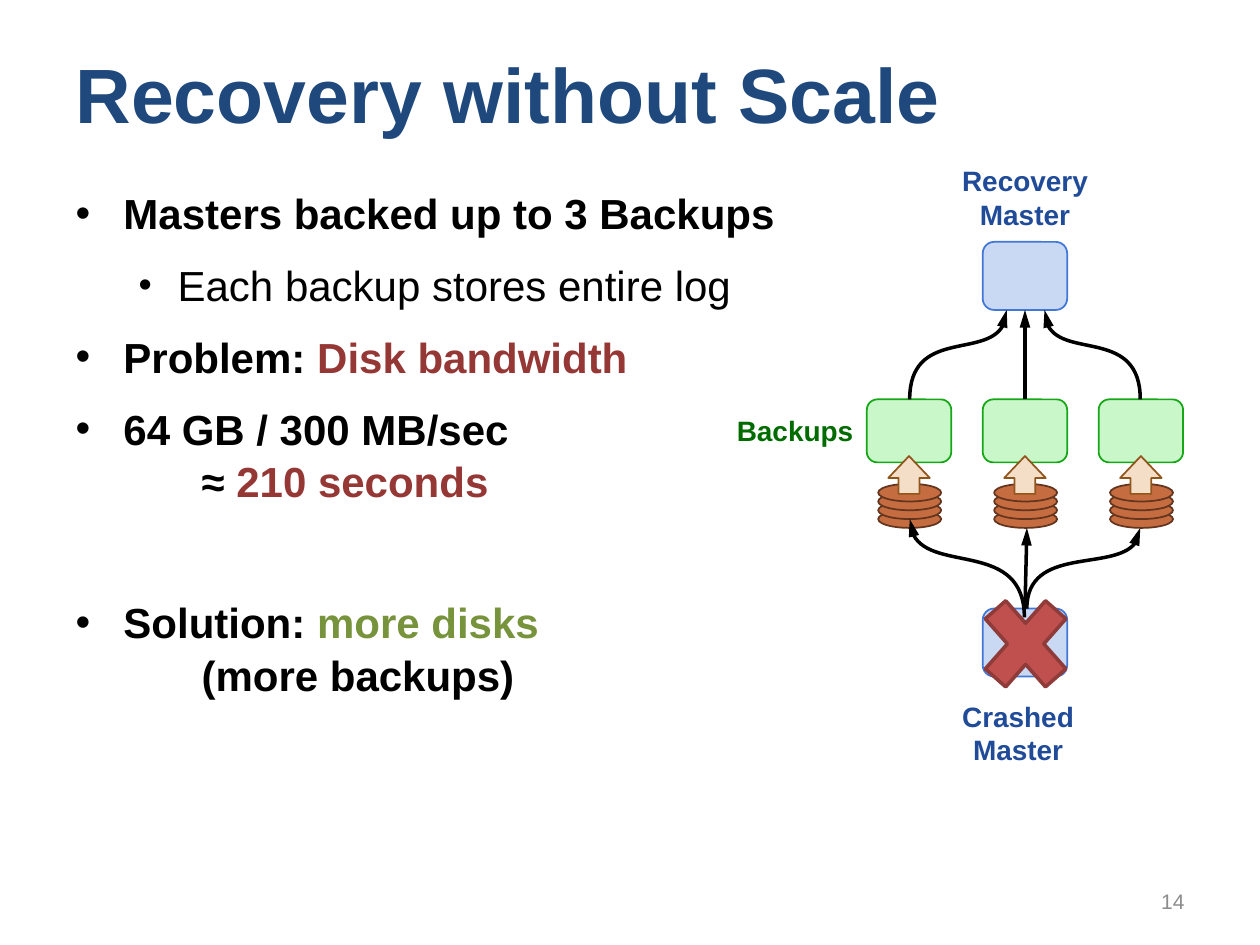
from dataclasses import dataclass

from lxml import etree
from pptx import Presentation
from pptx.dml.color import RGBColor
from pptx.enum.shapes import MSO_CONNECTOR, MSO_SHAPE
from pptx.enum.text import MSO_ANCHOR, MSO_AUTO_SIZE, PP_ALIGN
from pptx.oxml.ns import qn
from pptx.util import Inches, Pt

ROUNDED, DISK = MSO_SHAPE.ROUNDED_RECTANGLE, MSO_SHAPE.OVAL
UP_ARROW, CROSS = MSO_SHAPE.UP_ARROW, MSO_SHAPE.MATH_MULTIPLY
STRAIGHT = MSO_CONNECTOR.STRAIGHT
LEFT, CENTER, RIGHT = PP_ALIGN.LEFT, PP_ALIGN.CENTER, PP_ALIGN.RIGHT
MIDDLE, TOP = MSO_ANCHOR.MIDDLE, MSO_ANCHOR.TOP
NO_AUTOFIT = MSO_AUTO_SIZE.NONE


@dataclass(frozen=True)
class Theme:
    font: str = "Arial"
    title_size: int = 44
    body_size: int = 24
    label_size: int = 16
    number_size: int = 12
    title: str = "1F497D"
    text: str = "000000"
    problem: str = "953735"
    solution: str = "77933C"
    number: str = "8C8C8C"
    master_label: str = "204B98"
    backup_label: str = "006C00"
    # Fill, outline, outline width
    master: tuple = ("C9D8F3", "4177D7", 1)
    backup: tuple = ("C9F7C9", "15A715", 1)
    disk: tuple = ("C56D41", "64351E", 1)
    read_arrow: tuple = ("F4DEC8", "90561C", 1)
    crash: tuple = ("C0504D", "8E3B39", 2)


THEME = Theme()

prs = Presentation()
prs.slide_width, prs.slide_height = Inches(10), Inches(7.5)
slide = prs.slides.add_slide(prs.slide_layouts[1])
shapes = slide.shapes


def add_block(kind, left, top, width, height, style):
    fill, outline, weight = style
    block = shapes.add_shape(kind, Inches(left), Inches(top), Inches(width), Inches(height))
    block.shadow.inherit = False
    block.fill.solid()
    block.fill.fore_color.rgb = RGBColor.from_string(fill)
    block.line.color.rgb = RGBColor.from_string(outline)
    block.line.width = Pt(weight)
    return block


def style_arrow(arrow):
    """Give a line its black stroke and end arrowhead, without a shadow."""
    arrow.line.color.rgb = RGBColor.from_string(THEME.text)
    arrow.line.width = Pt(2)
    properties = arrow._element.spPr
    etree.SubElement(properties.find(qn("a:ln")), qn("a:tailEnd"), type="triangle", w="med", len="lg")
    etree.SubElement(properties, qn("a:effectLst"))


# Title
title = shapes.title
title.left, title.top, title.width, title.height = Inches(0.5), Inches(0.3), Inches(9), Inches(0.87)
title.text_frame.text = "Recovery without Scale"
title.text_frame.vertical_anchor = MIDDLE
title.text_frame.auto_size = NO_AUTOFIT
heading = title.text_frame.paragraphs[0]
heading.alignment = LEFT
heading.font.name, heading.font.size, heading.font.bold = THEME.font, Pt(THEME.title_size), True
heading.font.color.rgb = RGBColor.from_string(THEME.title)

# Bullet list: level, then lines of (text, colour) pieces
bullets = [
    (0, [[("Masters backed up to 3 Backups", THEME.text)]]),
    (1, [[("Each backup stores entire log", THEME.text)]]),
    (0, [[("Problem: ", THEME.text), ("Disk bandwidth", THEME.problem)]]),
    (0, [[("64 GB / 300 MB/sec", THEME.text)],
         [("\t\t≈ ", THEME.text), ("210 seconds", THEME.problem)]]),
    (0, [[("Solution: ", THEME.text), ("more disks", THEME.solution)],
         [("\t\t(more backups)", THEME.text)]]),
]
indents = [(0.38, -0.38), (0.81, -0.31)]
body = slide.placeholders[1]
body.left, body.top, body.width, body.height = Inches(0.5), Inches(1.42), Inches(6.08), Inches(5.28)
body.text_frame.auto_size = NO_AUTOFIT
for index, (level, lines) in enumerate(bullets):
    item = body.text_frame.add_paragraph() if index else body.text_frame.paragraphs[0]
    item.level = level
    item.line_spacing = 1.05
    item.space_after = Pt(6)
    if lines is bullets[-1][1]:
        item.space_before = Pt(44)
    item.font.name, item.font.size, item.font.bold = THEME.font, Pt(THEME.body_size), level == 0
    margin, hanging = indents[level]
    properties = item._p.get_or_add_pPr()
    properties.set("marL", str(Inches(margin)))
    properties.set("indent", str(Inches(hanging)))
    if level:
        etree.SubElement(properties, qn("a:buSzPct"), val="90000")
    etree.SubElement(properties, qn("a:buFont"), typeface=THEME.font)
    etree.SubElement(properties, qn("a:buChar"), char="•")
    # Bullet elements come before the default run properties
    defaults = properties.find(qn("a:defRPr"))
    if defaults is not None:
        properties.append(defaults)
    for line_index, line in enumerate(lines):
        if line_index:
            item.add_line_break()
        for words, color in line:
            piece = item.add_run()
            piece.text = words
            piece.font.color.rgb = RGBColor.from_string(color)
    for run_properties in item._p.iter(qn("a:rPr")):
        run_properties.set("sz", str(THEME.body_size * 100))
    for line_break in item._p.findall(qn("a:br")):
        etree.SubElement(line_break, qn("a:rPr"), sz=str(THEME.body_size * 100))

# Masters, with the three backups and their disks between them
recovery_master = add_block(ROUNDED, 7.8, 1.92, 0.67, 0.54, THEME.master)
backups = []
for column in range(3):
    left = 6.88 + 0.92 * column
    for layer in range(4):
        add_block(DISK, left + 0.09, 4.05 - 0.07 * layer, 0.5, 0.14, THEME.disk)
    backups.append(add_block(ROUNDED, left, 3.17, 0.67, 0.5, THEME.backup))
    read_arrow = add_block(UP_ARROW, left + 0.17, 3.62, 0.33, 0.3, THEME.read_arrow)
    read_arrow.adjustments[0], read_arrow.adjustments[1] = 0.5, 0.58
crashed_master = add_block(ROUNDED, 7.8, 4.83, 0.67, 0.54, THEME.master)

# Curved flows: start, two control points, end
curves = [
    [(7.22, 3.17), (7.22, 2.61), (7.98, 2.9), (7.99, 2.46)],
    [(9.05, 3.17), (9.05, 2.61), (8.29, 2.9), (8.29, 2.46)],
    [(8.13, 4.9), (8.13, 4.29), (7.23, 4.6), (7.22, 4.12)],
    [(8.15, 4.83), (8.15, 4.33), (9.04, 4.59), (9.05, 4.19)],
]
for curve in curves:
    start, *rest = [(Inches(x), Inches(y)) for x, y in curve]
    builder = shapes.build_freeform(*start)
    builder.add_line_segments(rest, close=False)
    flow = builder.convert_to_shape()
    flow.fill.background()
    style_arrow(flow)
    # Turn the three segments into one cubic curve
    outline = flow._element.spPr.find(".//" + qn("a:path"))
    bezier = etree.SubElement(outline, qn("a:cubicBezTo"))
    for segment in outline.findall(qn("a:lnTo")):
        bezier.append(segment[0])
        outline.remove(segment)

# Straight flows
restore = shapes.add_connector(STRAIGHT, Inches(8.13), Inches(3.17), Inches(8.13), Inches(2.46))
restore.begin_connect(backups[1], 0)
restore.end_connect(recovery_master, 2)
store = shapes.add_connector(STRAIGHT, Inches(8.13), Inches(4.83), Inches(8.15), Inches(4.19))
store.begin_connect(crashed_master, 0)
for arrow in (restore, store):
    style_arrow(arrow)

add_block(CROSS, 7.68, 4.59, 0.92, 1.04, THEME.crash)

# Labels and slide number
labels = [
    ("Recovery\vMaster", 7.53, 1.25, 1.21, 0.64, CENTER, TOP, THEME.label_size, THEME.master_label),
    ("Backups", 5.75, 3.23, 1.13, 0.37, LEFT, TOP, THEME.label_size, THEME.backup_label),
    ("Crashed\nMaster", 7.53, 5.5, 1.1, 0.64, CENTER, TOP, THEME.label_size, THEME.master_label),
    ("14", 7.17, 6.95, 2.33, 0.4, RIGHT, MIDDLE, THEME.number_size, THEME.number),
]
for words, left, top, width, height, alignment, anchor, size, color in labels:
    label = shapes.add_textbox(Inches(left), Inches(top), Inches(width), Inches(height)).text_frame
    label.text = words
    label.word_wrap = anchor == MIDDLE
    label.vertical_anchor = anchor
    for paragraph in label.paragraphs:
        paragraph.alignment = alignment
        paragraph.font.name, paragraph.font.size = THEME.font, Pt(size)
        paragraph.font.bold = size == THEME.label_size
        paragraph.font.color.rgb = RGBColor.from_string(color)

prs.save("out.pptx")
